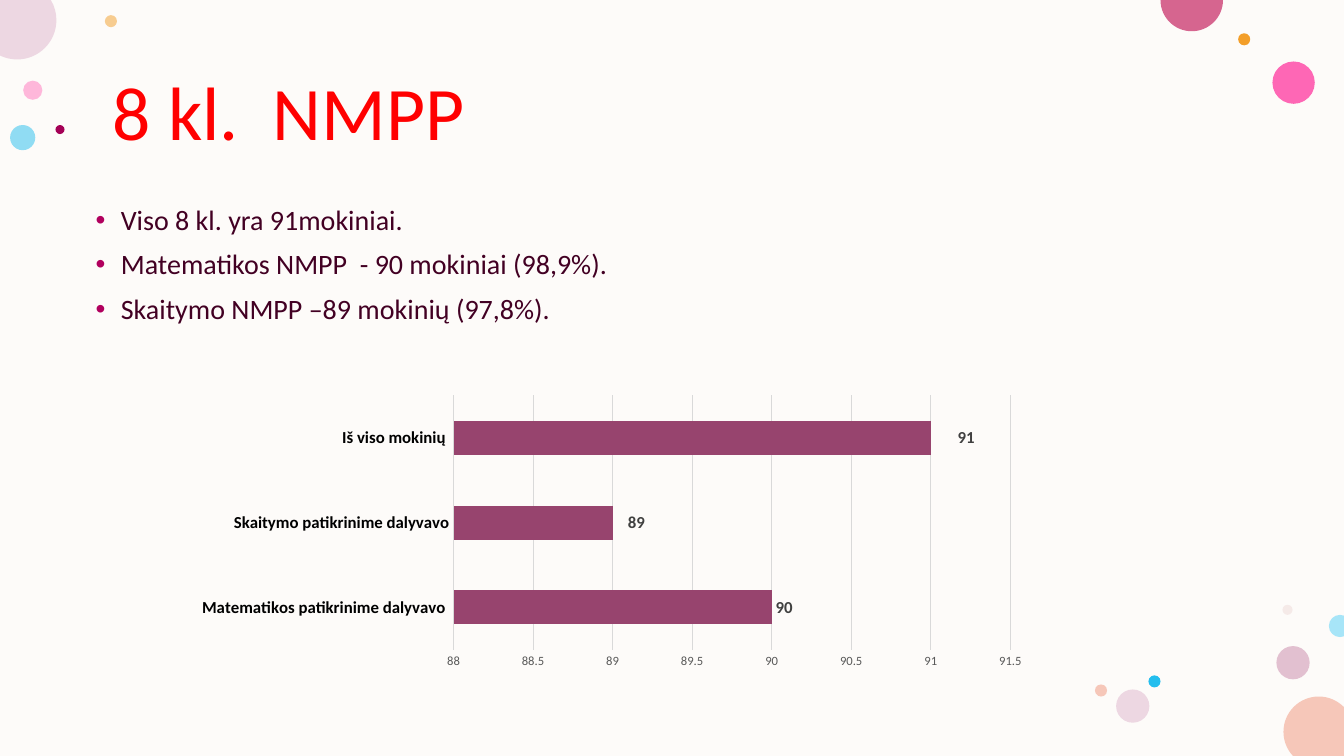
import math
from dataclasses import dataclass

from lxml import etree
from pptx import Presentation
from pptx import util as u
from pptx.chart.data import CategoryChartData
from pptx.dml.color import RGBColor
from pptx.enum import chart as ch, shapes, text
from pptx.oxml import ns, parse_xml


@dataclass(frozen=True)
class Theme:
    font: str = "Calibri"
    paper: str = "FDFBF9"
    title: str = "FF0000"
    body: str = "420023"
    bullet: str = "B1005E"
    bar: str = "97446E"
    grid: str = "D9D9D9"
    category: str = "000000"
    label: str = "404040"
    scale: str = "595959"
    title_size: int = 54
    body_size: int = 20
    label_size: int = 12
    scale_size: int = 9


THEME = Theme()
WIDTH, HEIGHT = 13.33, 7.5

# Whole dots: left, top, diameter, colour, opacity in percent
DOTS = [
    (0.23, 0.8, 0.19, "FF75BD", 50),
    (1.04, 0.15, 0.12, "F39E29", 50),
    (12.66, 6.41, 0.33, "C987A8", 50),
    (0.1, 1.24, 0.25, "24BEEE", 50),
    (12.62, 0.61, 0.42, "FF2F9C", 72),
    (12.28, 0.33, 0.12, "F39E29", 100),
    (12.72, 6, 0.1, "E3BEBE", 28),
    (11.39, 6.7, 0.12, "24BEEE", 100),
    (11.07, 6.84, 0.33, "EDD7E2", 100),
    (10.86, 6.79, 0.12, "F6C7B9", 100),
    (0.55, 1.24, 0.09, "A40056", 100),
]
# Dots cut by the slide edge: centre x, centre y, radius,
# first and last degree of the visible arc, slide corner inside, colour
EDGE_DOTS = [
    (13.08, 7.26, 0.35, 136.7, 315.6, [(WIDTH, HEIGHT)], "F6C7B9"),
    (0.17, 0.2, 0.39, -30.9, 115.8, [(0, 0)], "EDD7E2"),
    (11.82, 0, 0.31, 0, 180, [], "D6658F"),
    (13.29, 6.21, 0.11, 68.7, 291.3, [], "A7E5F8"),
]
FACTS = [
    "Viso 8 kl. yra 91mokiniai.",
    "Matematikos NMPP  - 90 mokiniai (98,9%).",
    "Skaitymo NMPP –89 mokinių (97,8%).",
]
# Category, value, shift of its label as a share of the chart width
RESULTS = [
    ("Matematikos patikrinime dalyvavo ", 90, 0),
    ("Skaitymo patikrinime dalyvavo", 89, 0.01),
    ("Iš viso mokinių ", 91, 0.02),
]


def style_font(font, size, color, bold=False):
    font.name, font.size, font.bold = THEME.font, u.Pt(size), bold
    font.color.rgb = RGBColor.from_string(color)


def paint(shape, color, opacity=100):
    shape.shadow.inherit = False
    shape.line.fill.background()
    shape.fill.solid()
    shape.fill.fore_color.rgb = RGBColor.from_string(color)
    if opacity < 100:
        tone = shape.fill._xPr.find(".//" + ns.qn("a:srgbClr"))
        etree.SubElement(tone, ns.qn("a:alpha")).set("val", str(opacity * 1000))


def add_text(page, box, lines, *, size, color, anchor=text.MSO_ANCHOR.TOP,
             before=0, bullet=None):
    frame = page.shapes.add_textbox(*map(u.Inches, box)).text_frame
    frame.word_wrap = True
    frame.vertical_anchor = anchor
    for index, line in enumerate(lines):
        para = frame.add_paragraph() if index else frame.paragraphs[0]
        para.line_spacing = 0.9
        para.space_before = u.Pt(before)
        span = para.add_run()
        span.text = line
        style_font(span.font, size, color)
        if bullet:
            props = para._p.get_or_add_pPr()
            indent = u.Inches(0.25)
            props.set("marL", str(indent))
            props.set("indent", str(-indent))
            tint = etree.SubElement(props, ns.qn("a:buClr"))
            etree.SubElement(tint, ns.qn("a:srgbClr")).set("val", bullet)
            etree.SubElement(props, ns.qn("a:buFont")).set("typeface", "Arial")
            etree.SubElement(props, ns.qn("a:buChar")).set("char", "•")


def arc_points(x, y, radius, first, last):
    """Return the start, then two controls and an end for each quadrant."""
    inner = [turn for turn in range(-360, 361, 90) if first < turn < last]
    stops = [math.radians(turn) for turn in (first, *inner, last)]

    def spot(angle, pull=0):
        return (x + radius * (math.cos(angle) - pull * math.sin(angle)),
                y + radius * (math.sin(angle) + pull * math.cos(angle)))

    points = [spot(stops[0])]
    for start, end in zip(stops, stops[1:]):
        pull = 4 / 3 * math.tan((end - start) / 4)
        points += [spot(start, pull), spot(end, -pull), spot(end)]
    return points


def add_cut_dot(page, arc, corner, color):
    points = [tuple(map(u.Inches, point)) for point in arc + corner]
    builder = page.shapes.build_freeform(*points[0])
    builder.add_line_segments(points[1:], close=True)
    dot = builder.convert_to_shape()
    # Each three steps along the arc become one curve
    steps = dot._element.findall(".//" + ns.qn("a:lnTo"))[:len(arc) - 1]
    for index in range(0, len(steps), 3):
        curve = etree.Element(ns.qn("a:cubicBezTo"))
        steps[index].addprevious(curve)
        for step in steps[index:index + 3]:
            curve.append(step[0])
            step.getparent().remove(step)
    paint(dot, color)


def add_backdrop(page, box):
    sheet = page.shapes.add_shape(shapes.MSO_SHAPE.RECTANGLE, *map(u.Inches, box))
    paint(sheet, THEME.paper)
    for x, y, size, color, opacity in DOTS:
        place = (box[0] + x, box[1] + y, size, size)
        dot = page.shapes.add_shape(shapes.MSO_SHAPE.OVAL, *map(u.Inches, place))
        paint(dot, color, opacity)
    for *circle, corner, color in EDGE_DOTS:
        add_cut_dot(page, arc_points(*circle), corner, color)


def manual_layout(**values):
    parts = "".join(f'<c:{key} val="{value}"/>' for key, value in values.items())
    return parse_xml(f'<c:layout {ns.nsdecls("c")}><c:manualLayout>{parts}'
                     '</c:manualLayout></c:layout>')


def hide_leader_lines(labels):
    for mark in labels._element.findall(ns.qn("c:showLeaderLines")):
        mark.set("val", "0")
    labels._element.append(parse_xml(
        f'<c:extLst {ns.nsdecls("c")}>'
        '<c:ext uri="{CE6537A1-D6FC-4f65-9D91-7224C49458BB}" xmlns:c15='
        '"http://schemas.microsoft.com/office/drawing/2012/chart">'
        '<c15:showLeaderLines val="0"/></c:ext></c:extLst>'))


def add_results(page, box):
    data = CategoryChartData()
    data.categories = [name for name, _, _ in RESULTS]
    data.add_series("Series 1", [value for _, value, _ in RESULTS])
    chart = page.shapes.add_chart(
        ch.XL_CHART_TYPE.BAR_CLUSTERED, *map(u.Inches, box), data).chart
    chart.has_legend = chart.has_title = False
    style_font(chart.font, 10, THEME.category)

    # Plot area
    area = chart._chartSpace.chart.plotArea
    for old in area.findall(ns.qn("c:layout")):
        area.remove(old)
    area.insert(0, manual_layout(layoutTarget="inner", xMode="edge", yMode="edge",
                                 x=0.484, y=0.074, w=0.487, h=0.842))

    # Axes
    names, scale = chart.category_axis, chart.value_axis
    for axis in (names, scale):
        axis.major_tick_mark = axis.minor_tick_mark = ch.XL_TICK_MARK.NONE
        axis.format.line.fill.background()
    style_font(names.tick_labels.font, THEME.label_size, THEME.category, bold=True)
    style_font(scale.tick_labels.font, THEME.scale_size, THEME.scale)
    scale.minimum_scale, scale.maximum_scale, scale.major_unit = 88, 91.5, 0.5
    grid = scale.major_gridlines.format.line
    grid.width = u.Pt(0.75)
    grid.color.rgb = RGBColor.from_string(THEME.grid)

    # Bars and their labels
    plot = chart.plots[0]
    plot.gap_width, plot.vary_by_categories = 150, False
    bars = plot.series[0]
    bars.format.fill.solid()
    bars.format.fill.fore_color.rgb = RGBColor.from_string(THEME.bar)
    labels = bars.data_labels
    labels.show_value = True
    for index, (_, _, shift) in enumerate(RESULTS):
        label = bars.points[index].data_label
        style_font(label.font, THEME.label_size, THEME.label, bold=True)
        label.position = ch.XL_LABEL_POSITION.OUTSIDE_END
        if shift:
            mark = labels._element.findall(ns.qn("c:dLbl"))[index]
            mark.insert(1, manual_layout(x=shift, y=0))
    style_font(labels.font, THEME.label_size, THEME.label, bold=True)
    hide_leader_lines(labels)


def add_report(page, box):
    left, top, width, height = box
    add_backdrop(page, box)
    inner = width - 1.67
    add_text(page, (left + 0.85, top + 0.43, inner, 1.45), [" 8 kl.  NMPP"],
             size=THEME.title_size, color=THEME.title,
             anchor=text.MSO_ANCHOR.MIDDLE)
    add_text(page, (left + 0.85, top + 2, inner, 4.76), FACTS, before=10,
             size=THEME.body_size, color=THEME.body, bullet=THEME.bullet)
    add_results(page, (left - 0.99, top + 3.7, 11.34, 3))


deck = Presentation()
deck.slide_width, deck.slide_height = u.Inches(WIDTH), u.Inches(HEIGHT)
add_report(deck.slides.add_slide(deck.slide_layouts[6]), (0, 0, WIDTH, HEIGHT))
deck.save("out.pptx")
